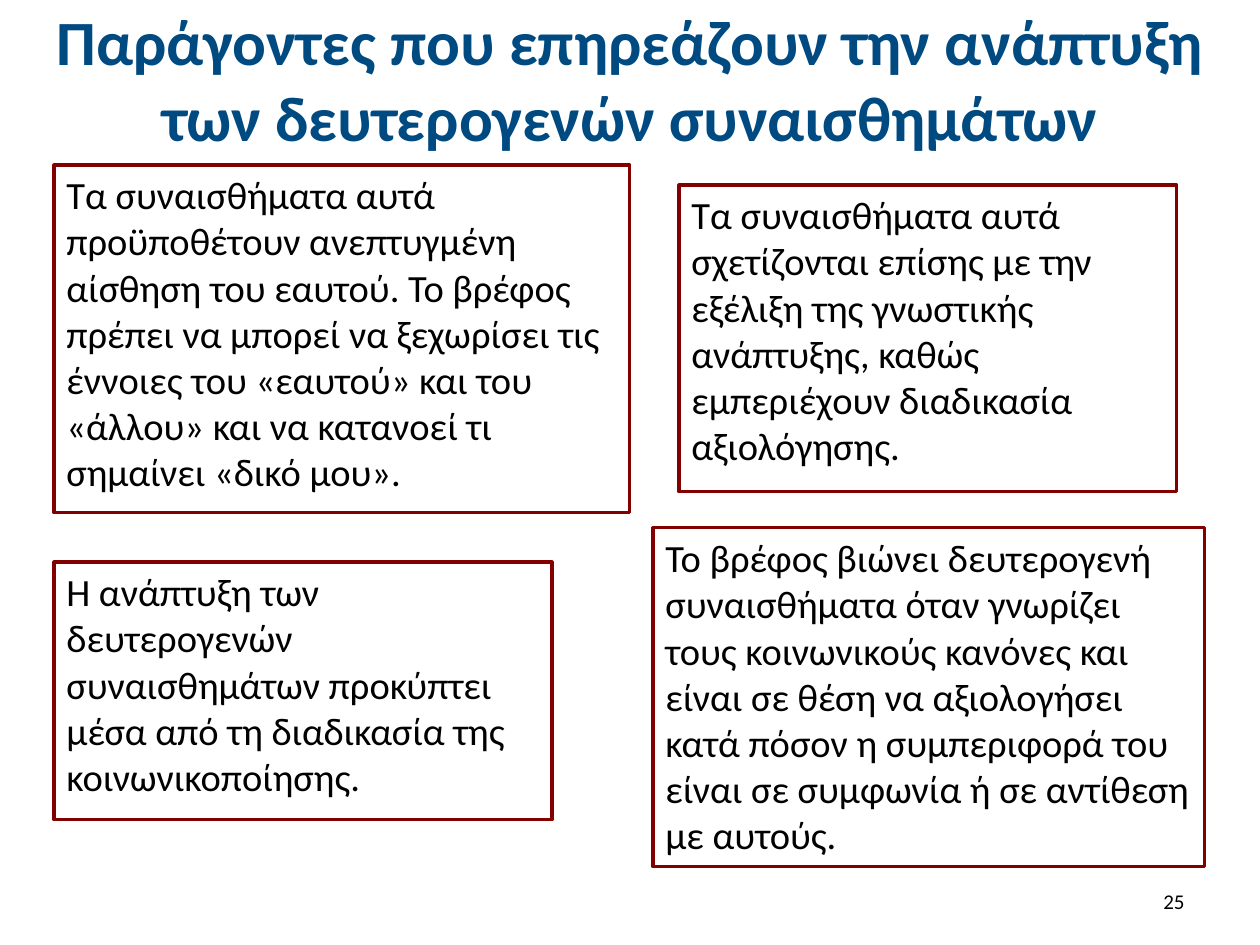
from pptx import Presentation
from pptx import util as u
from pptx.dml.color import RGBColor
from pptx.enum import shapes, text

PX = u.Inches(1) / 126
COLORS = {"title": "004A82", "body": "000000", "border": "820000"}
TITLE = {"size": u.Pt(36), "bold": True}
BODY = {"size": u.Pt(22)}
NUMBER = {"size": u.Pt(12)}

HEADING = "Παράγοντες που επηρεάζουν την ανάπτυξη των δευτερογενών συναισθημάτων"
FACTORS = [
    ((54, 165, 576, 348),
     "Τα συναισθήματα αυτά προϋποθέτουν ανεπτυγμένη αίσθηση του εαυτού. "
     "Το βρέφος πρέπει να μπορεί να ξεχωρίσει τις έννοιες του «εαυτού» και του "
     "«άλλου» και να κατανοεί τι σημαίνει «δικό μου»."),
    ((679, 185, 498, 307),
     "Τα συναισθήματα αυτά σχετίζονται επίσης με την εξέλιξη της γνωστικής "
     "ανάπτυξης, καθώς εμπεριέχουν διαδικασία αξιολόγησης."),
    ((54, 562, 498, 258),
     "Η ανάπτυξη των δευτερογενών συναισθημάτων προκύπτει μέσα από τη "
     "διαδικασία της κοινωνικοποίησης."),
    ((653, 528, 552, 339),
     "Το βρέφος βιώνει δευτερογενή συναισθήματα όταν γνωρίζει τους κοινωνικούς "
     "κανόνες και είναι σε θέση να αξιολογήσει κατά πόσον η συμπεριφορά του "
     "είναι σε συμφωνία ή σε αντίθεση με αυτούς."),
]


def px(*lengths):
    return [u.Emu(round(length * PX)) for length in lengths]


class SlideBuilder:
    def __init__(self, slide, font="Calibri"):
        self.slide = slide
        self.font = font

    def fill_text(self, frame, words, color, style, align, anchor):
        frame.word_wrap = True
        frame.vertical_anchor = anchor
        paragraph = frame.paragraphs[0]
        paragraph.alignment = align
        run = paragraph.add_run()
        run.text = words
        for name, value in {"name": self.font, **style}.items():
            setattr(run.font, name, value)
        run.font.color.rgb = RGBColor.from_string(COLORS[color])

    def label(self, place, words, color, style, align):
        """Add unframed text, centred vertically."""
        area = self.slide.shapes.add_textbox(*px(*place))
        self.fill_text(area.text_frame, words, color, style, align,
                       text.MSO_ANCHOR.MIDDLE)

    def framed(self, place, words):
        """Add a bordered, unfilled box with text from the top left."""
        box = self.slide.shapes.add_shape(
            shapes.MSO_SHAPE.RECTANGLE, *px(*place))
        box.shadow.inherit = False
        box.fill.background()
        box.line.color.rgb = RGBColor.from_string(COLORS["border"])
        box.line.width = u.Pt(1.75)
        self.fill_text(box.text_frame, words, "body", BODY,
                       text.PP_ALIGN.LEFT, text.MSO_ANCHOR.TOP)


def main():
    deck = Presentation()
    deck.slide_width, deck.slide_height = px(1260, 945)
    builder = SlideBuilder(deck.slides.add_slide(deck.slide_layouts[6]))
    builder.label((0, 16, 1260, 125), HEADING, "title", TITLE,
                  text.PP_ALIGN.CENTER)
    for place, words in FACTORS:
        builder.framed(place, words)
    builder.label((903, 876, 294, 50), "25", "body", NUMBER,
                  text.PP_ALIGN.RIGHT)
    deck.save("out.pptx")


if __name__ == "__main__":
    main()
